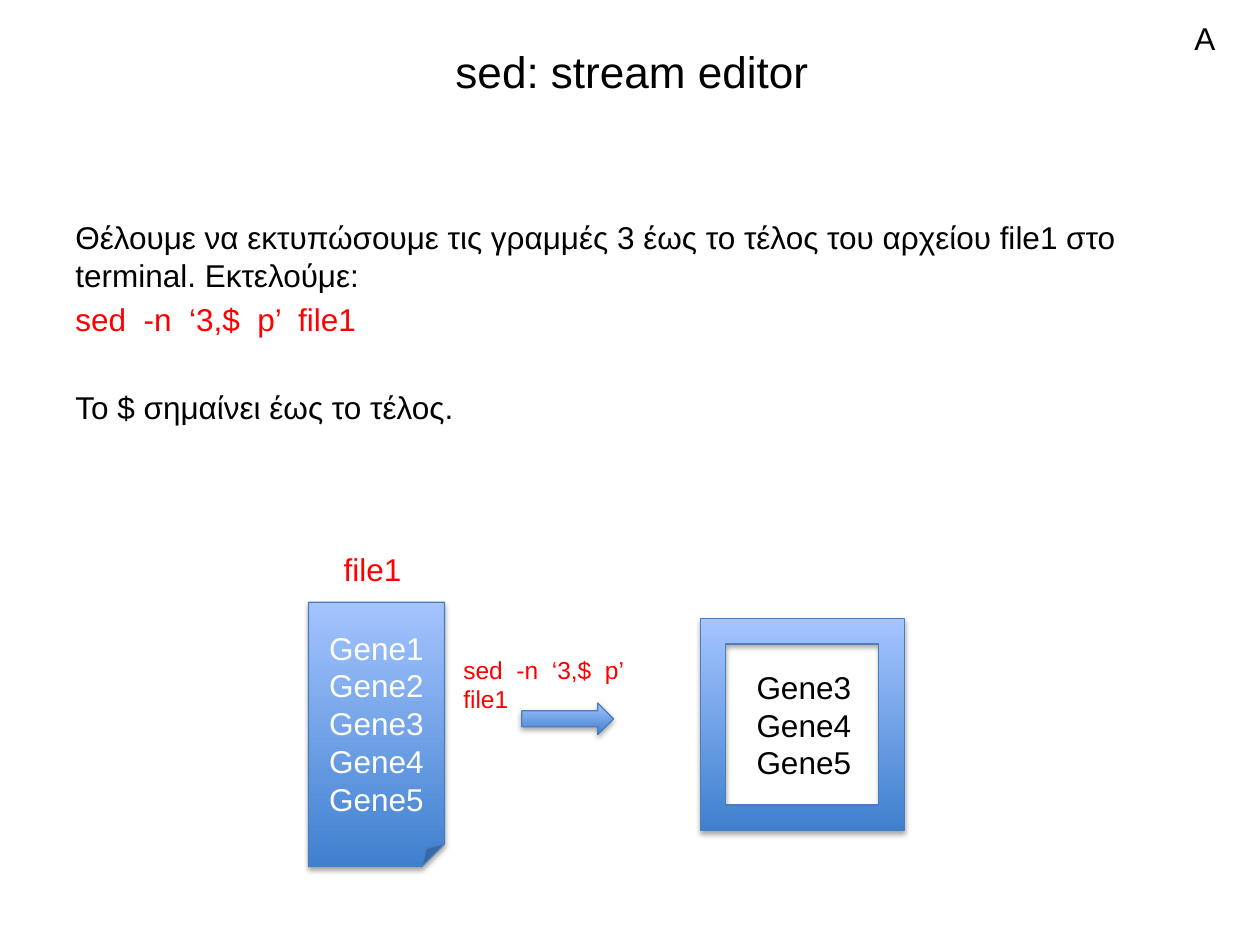
from lxml import etree
from pptx import Presentation
from pptx.dml.color import RGBColor
from pptx.enum import shapes, text
from pptx.oxml.ns import qn
from pptx.util import Cm, Pt

BLACK, RED, WHITE = "000000", "FF0000", "FFFFFF"
CODE = "sed  -n  ‘3,$  p’  file1"
GENES = [f"Gene{n}" for n in range(1, 6)]
MID = text.PP_ALIGN.CENTER
KIND = shapes.MSO_SHAPE


def color(hex):
    return RGBColor.from_string(hex)


def write(frame, lines, size=18, align=text.PP_ALIGN.LEFT):
    """Fill a frame with (words, colour, points before) lines."""
    for n, (words, hue, gap) in enumerate(lines):
        para = frame.add_paragraph() if n else frame.paragraphs[0]
        para.alignment = align
        para.space_before = Pt(gap)
        run = para.add_run()
        run.text = words
        run.font.name = "Arial"
        run.font.size = Pt(size)
        run.font.color.rgb = color(hue)


def label(slide, box, lines, size=18, align=text.PP_ALIGN.LEFT, wrap=True):
    frame = slide.shapes.add_textbox(*map(Cm, box)).text_frame
    frame.word_wrap = wrap
    write(frame, lines, size, align)
    return frame


def shade(shape):
    """Add a soft shadow below the shape."""
    shape.shadow.inherit = False
    effects = shape._element.spPr.find(qn("a:effectLst"))
    outer = etree.SubElement(effects, qn("a:outerShdw"), blurRad="40000",
                             dist="23000", dir="5400000", rotWithShape="0")
    hue = etree.SubElement(outer, qn("a:srgbClr"), val=BLACK)
    etree.SubElement(hue, qn("a:alpha"), val="35000")


def block(slide, kind, box):
    """Add a preset shape with the blue gradient."""
    shape = slide.shapes.add_shape(kind, *map(Cm, box))
    shape.fill.gradient()
    shape.fill.gradient_angle = 90
    for stop, (place, hue) in zip(shape.fill.gradient_stops,
                                  [(0, "3F80CE"), (1, "A4C4FF")]):
        stop.position = place
        stop.color.rgb = color(hue)
    shape.line.color.rgb = color("4B7EBC")
    shape.line.width = Pt(0.75)
    shade(shape)
    return shape


def header(slide, box):
    x, y, w, h = box
    title = label(slide, (x + 3.71, y + 0.76, w - 7.34, 1.32),
                  [("sed: stream editor", BLACK, 0)], 25.2, MID)
    title.vertical_anchor = text.MSO_ANCHOR.MIDDLE
    label(slide, (x + w - 1.57, y + 0.25, 1.27, 1.02), [("Α", BLACK, 0)])


def body(slide, box):
    frame = label(slide, box, [
        ("Θέλουμε να εκτυπώσουμε τις γραμμές 3 έως το τέλος του αρχείου "
         "file1 στο terminal. Εκτελούμε:", BLACK, 0),
        (CODE, RED, 3.6),
        ("Το $ σημαίνει έως το τέλος.", BLACK, 28.7),
    ])
    frame.margin_top = 0


def diagram(slide, x, y):
    """Draw the file, the command and its output from a top left corner."""
    file = block(slide, KIND.FOLDED_CORNER, (x, y + 1.17, 2.74, 5.33))
    file.text_frame.vertical_anchor = text.MSO_ANCHOR.MIDDLE
    write(file.text_frame, [(gene, WHITE, 0) for gene in GENES], align=MID)
    label(slide, (x + 0.46, y, 1.7, 1.02), [("file1", RED, 0)], wrap=False)

    block(slide, KIND.RIGHT_ARROW, (x + 4.3, y + 3.2, 1.85, 0.64))
    label(slide, (x + 2.87, y + 2.11, 4.9, 0.86), [(CODE, RED, 0)], 14,
          wrap=False)

    block(slide, KIND.FRAME, (x + 7.9, y + 1.5, 4.11, 4.27))
    label(slide, (x + 8.59, y + 2.37, 2.79, 2.57),
          [(gene, BLACK, 0) for gene in GENES[2:]], align=MID)


def main():
    deck = Presentation()
    deck.slide_width, deck.slide_height = Cm(25.4), Cm(19.05)
    slide = deck.slides.add_slide(deck.slide_layouts[6])
    header(slide, (0, 0, 25.4, 2.4))
    body(slide, (1.27, 4.39, 22.86, 6))
    diagram(slide, 6.22, 10.97)
    deck.save("out.pptx")


if __name__ == "__main__":
    main()
